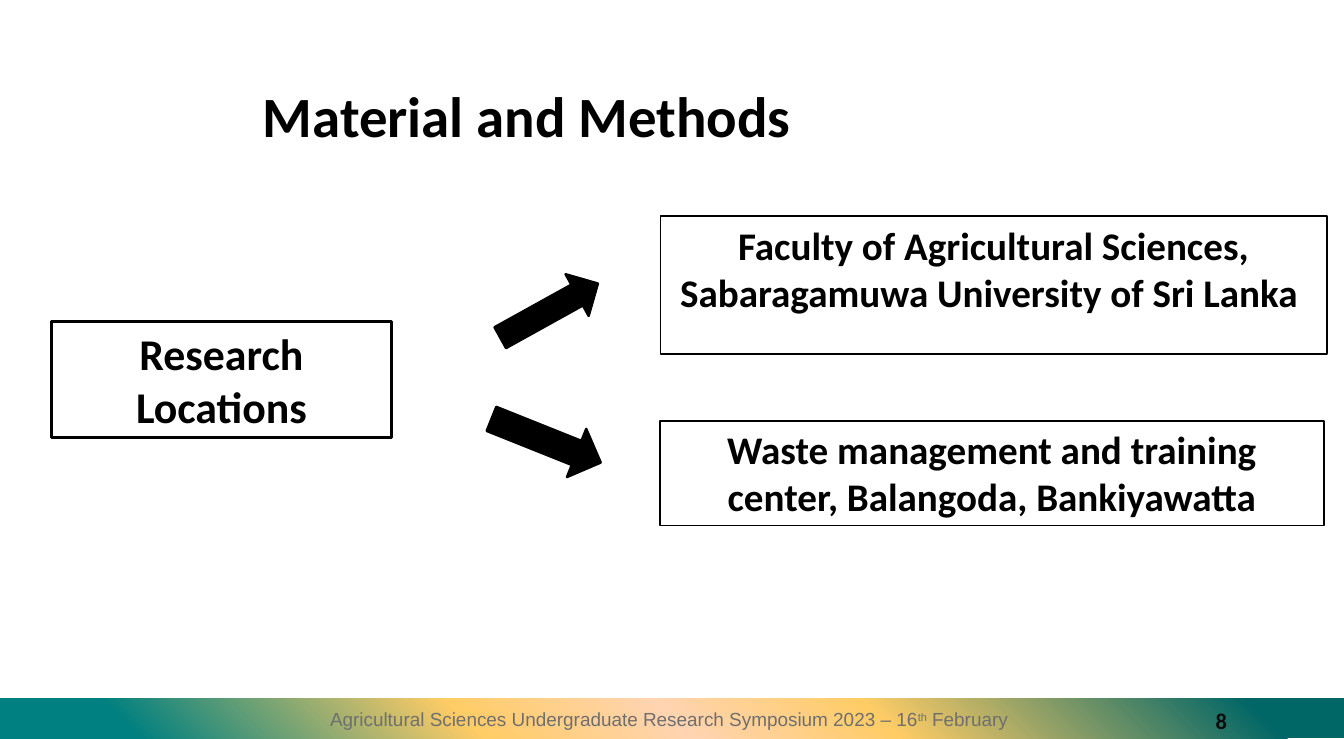
import pptx
import pptx.util
import pptx.dml.color
import pptx.enum.shapes
import pptx.enum.text
import pptx.oxml
import pptx.oxml.ns

Inches, Pt = pptx.util.Inches, pptx.util.Pt
SHAPE = pptx.enum.shapes.MSO_SHAPE
ALIGN = pptx.enum.text.PP_ALIGN
ANCHOR = pptx.enum.text.MSO_ANCHOR

COLORS = {"ink": "000000", "footer": "6F6F6F", "number": "0C0C0C"}
BAND_STOPS = [(0, "008080"), (10, "008080"), (35, "FFCC66"), (50, "FFD4B1"),
              (65, "FFCC66"), (93, "006666"), (100, "006666")]


def rgb(name):
    return pptx.dml.color.RGBColor.from_string(COLORS[name])


def format_text(shape, size, color, align, anchor, font="Calibri", bold=True):
    frame = shape.text_frame
    frame.word_wrap = True
    frame.auto_size = pptx.enum.text.MSO_AUTO_SIZE.NONE
    frame.vertical_anchor = anchor
    frame.margin_left = frame.margin_right = Inches(0.12)
    frame.margin_top = frame.margin_bottom = Inches(0.06)
    paragraph = frame.paragraphs[0]
    paragraph.alignment = align
    paragraph.font.name = font
    paragraph.font.size = Pt(size)
    paragraph.font.bold = bold
    paragraph.font.color.rgb = rgb(color)
    return paragraph


def place_title(slide, left, top, width, height):
    title = slide.shapes.title
    title.left, title.top = Inches(left), Inches(top)
    title.width, title.height = Inches(width), Inches(height)
    title.text_frame.text = "Material and Methods"
    format_text(title, 48, "ink", ALIGN.LEFT, ANCHOR.MIDDLE).line_spacing = 0.9


def add_location_box(slide, text, size, line_width, left, top, width, height):
    box = slide.shapes.add_shape(SHAPE.RECTANGLE, Inches(left), Inches(top),
                                 Inches(width), Inches(height))
    box.shadow.inherit = False
    box.fill.background()
    box.line.color.rgb = rgb("ink")
    box.line.width = Pt(line_width)
    box.text_frame.text = text
    format_text(box, size, "ink", ALIGN.CENTER, ANCHOR.TOP)


def add_arrow(slide, rotation, left, top, width, height):
    arrow = slide.shapes.add_shape(SHAPE.RIGHT_ARROW, Inches(left), Inches(top),
                                   Inches(width), Inches(height))
    arrow.rotation = rotation
    arrow.shadow.inherit = False
    arrow.fill.solid()
    arrow.fill.fore_color.rgb = rgb("ink")
    arrow.line.color.rgb = rgb("ink")
    arrow.line.width = Pt(2)


def add_locations(slide, left, top):
    """Research locations branching into two sites."""
    add_location_box(slide, "Research Locations", 37, 2.25, left, top + 1.24, 3.99, 1.36)
    add_location_box(slide, "Faculty of Agricultural Sciences, Sabaragamuwa University of Sri Lanka ",
                     33, 1.5, left + 7.14, top, 7.81, 1.62)
    add_location_box(slide, "Waste management and training center, Balangoda, Bankiyawatta",
                     33, 1.5, left + 7.13, top + 2.4, 7.79, 1.23)
    add_arrow(slide, 331, left + 5.18, top + 0.83, 1.31, 0.56)
    add_arrow(slide, 21.8, left + 5.11, top + 2.33, 1.38, 0.61)


def add_footer(slide, left, top, width, height):
    # Radial gradient band
    band = slide.shapes.add_shape(SHAPE.RECTANGLE, Inches(left), Inches(top),
                                  Inches(width), Inches(height))
    band.shadow.inherit = False
    band.line.fill.background()
    stops = "".join(f'<a:gs pos="{pos * 1000}"><a:srgbClr val="{color}"/></a:gs>'
                    for pos, color in BAND_STOPS)
    gradient = pptx.oxml.parse_xml(
        f'<a:gradFill {pptx.oxml.ns.nsdecls("a")} rotWithShape="1"><a:gsLst>{stops}</a:gsLst>'
        '<a:path path="circle"><a:fillToRect t="100000" r="100000"/></a:path></a:gradFill>')
    band._element.spPr.find(pptx.oxml.ns.qn("a:prstGeom")).addnext(gradient)

    # Symposium name with raised ordinal
    symposium = slide.shapes.add_textbox(Inches(left + 1.34), Inches(top + 0.02),
                                         Inches(13.06), Inches(0.46))
    line = format_text(symposium, 16, "footer", ALIGN.CENTER, ANCHOR.MIDDLE, "Arial", False)
    line.add_run().text = "Agricultural Sciences Undergraduate Research Symposium 2023 – 16"
    ordinal = line.add_run()
    ordinal.text = "th"
    ordinal.font._element.set("baseline", "30000")
    line.add_run().text = " February "

    # Slide number
    number = slide.shapes.add_textbox(Inches(left + 10.96), Inches(top + 0.03),
                                      Inches(3.54), Inches(0.46))
    number.text_frame.text = "8"
    format_text(number, 19, "number", ALIGN.RIGHT, ANCHOR.MIDDLE)


def main():
    deck = pptx.Presentation()
    deck.slide_width, deck.slide_height = Inches(15.75), Inches(8.66)
    slide = deck.slides.add_slide(deck.slide_layouts[5])
    add_footer(slide, 0, 8.18, 15.75, 0.47)
    place_title(slide, 2.96, 0.65, 11.99, 1.49)
    add_locations(slide, 0.6, 2.53)
    deck.save("out.pptx")


if __name__ == "__main__":
    main()
